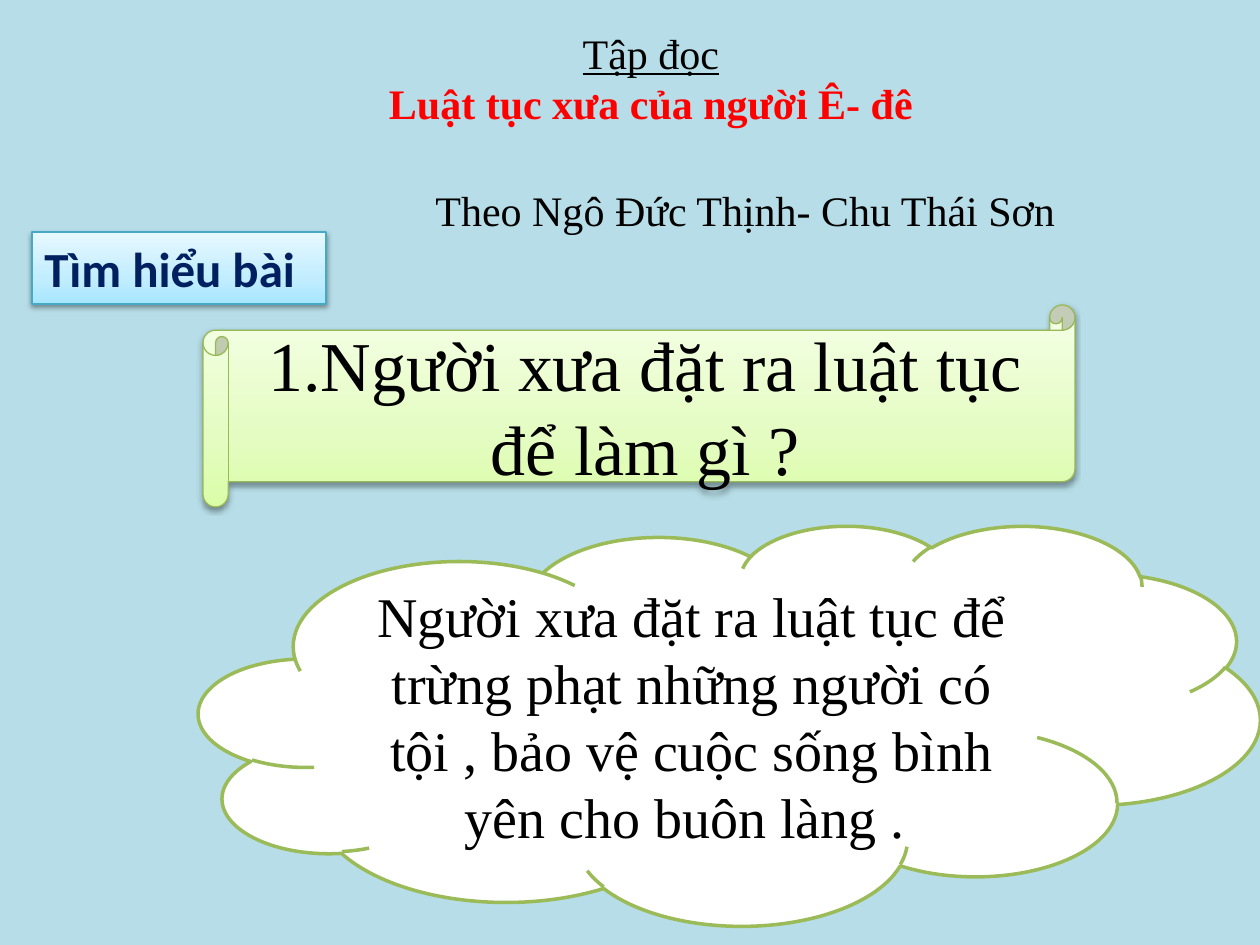
from copy import deepcopy

from lxml.etree import SubElement
from pptx import Presentation
from pptx.dml.color import RGBColor
from pptx.enum.shapes import MSO_SHAPE as SHAPE
from pptx.enum.text import MSO_ANCHOR as ANCHOR, MSO_AUTO_SIZE as AUTO, PP_ALIGN as ALIGN
from pptx.oxml.ns import qn
from pptx.util import Pt

PX = 914400 / 126
SKY = RGBColor(0xB7, 0xDE, 0xE8)
WHITE = RGBColor(0xFF, 0xFF, 0xFF)
BLACK = RGBColor(0, 0, 0)
RED = RGBColor(0xFF, 0, 0)
NAVY = RGBColor(0, 0x20, 0x60)
GREEN = RGBColor(0x9B, 0xBB, 0x59)
SCROLL_LINE = RGBColor(0x98, 0xB9, 0x55)
LABEL_LINE = RGBColor(0x46, 0xAA, 0xC5)
SCROLL_STOPS = [RGBColor(0xDA, 0xFD, 0xA7), RGBColor(0xE4, 0xFC, 0xC2), RGBColor(0xF5, 0xFF, 0xE7)]
LABEL_STOPS = [RGBColor(0xA7, 0xE6, 0xFF), RGBColor(0xC1, 0xED, 0xFF), RGBColor(0xE7, 0xF8, 0xFF)]
SERIF = "Times New Roman"


def add_text(para, text, size, color=BLACK, font=SERIF, bold=False, underline=False, align=ALIGN.CENTER):
    """Align a paragraph and add one formatted run to it."""
    para.alignment = align
    span = para.add_run()
    span.text = text
    span.font.size = Pt(size)
    span.font.name = font
    span.font.bold = bold
    span.font.underline = underline
    span.font.color.rgb = color


def style_raised(shape, colors):
    """Give a shape a three-stop upward gradient and a soft shadow below."""
    shape.fill.gradient()
    shape.fill.gradient_angle = 90
    stops = shape._element.spPr.find(qn("a:gradFill")).find(qn("a:gsLst"))
    stops.insert(1, deepcopy(stops[0]))
    for stop, position, color in zip(shape.fill.gradient_stops, (0, 0.35, 1), colors):
        stop.position = position
        stop.color.rgb = color
    effects = shape._element.spPr.find(qn("a:effectLst"))
    shadow = SubElement(effects, qn("a:outerShdw"), blurRad=str(Pt(3.1)), dist=str(Pt(1.6)),
                        dir="5400000", rotWithShape="0")
    tint = SubElement(shadow, qn("a:srgbClr"), val="000000")
    SubElement(tint, qn("a:alpha"), val="38000")


deck = Presentation()
deck.slide_width, deck.slide_height = round(1260 * PX), round(945 * PX)
page = deck.slides.add_slide(deck.slide_layouts[6])
page.background.fill.solid()
page.background.fill.fore_color.rgb = SKY

# Answer cloud, question scroll and section label
shapes = []
for kind, bounds, line, width in (
    (SHAPE.CLOUD, (199, 525, 1061, 400), GREEN, 2),
    (SHAPE.HORIZONTAL_SCROLL, (203, 305, 872, 202), SCROLL_LINE, 0.75),
    (SHAPE.RECTANGLE, (32, 232, 294, 72), LABEL_LINE, 0.75),
):
    shape = page.shapes.add_shape(kind, *(round(n * PX) for n in bounds))
    shape.shadow.inherit = False
    shape.line.color.rgb = line
    shape.line.width = Pt(width)
    shape.text_frame.word_wrap = True
    shape.text_frame.vertical_anchor = ANCHOR.MIDDLE
    shapes.append(shape)
cloud, scroll, label = shapes

cloud.fill.solid()
cloud.fill.fore_color.rgb = WHITE
style_raised(scroll, SCROLL_STOPS)
style_raised(label, LABEL_STOPS)
label.text_frame.vertical_anchor = ANCHOR.TOP
label.text_frame.auto_size = AUTO.SHAPE_TO_FIT_TEXT

add_text(cloud.text_frame.paragraphs[0],
         "Người xưa đặt ra luật tục để trừng phạt những người có tội , "
         "bảo vệ cuộc sống bình yên cho buôn làng . ", 32)
add_text(scroll.text_frame.paragraphs[0], "1.Người xưa đặt ra luật tục để làm gì ?", 40)
add_text(label.text_frame.paragraphs[0], "Tìm hiểu bài", 28, NAVY, "Calibri", bold=True, align=ALIGN.LEFT)

# Lesson heading and authors
heading = page.shapes.add_textbox(*(round(n * PX) for n in (84, 21, 1134, 105))).text_frame
heading.word_wrap = True
add_text(heading.paragraphs[0], "Tập đọc", 24, underline=True)
add_text(heading.add_paragraph(), "Luật tục xưa của người Ê- đê", 24, RED, bold=True)

authors = page.shapes.add_textbox(*(round(n * PX) for n in (423, 178, 651, 63))).text_frame
authors.word_wrap = False
authors.auto_size = AUTO.SHAPE_TO_FIT_TEXT
add_text(authors.paragraphs[0], "Theo Ngô Đức Thịnh- Chu Thái Sơn", 24, align=ALIGN.LEFT)

deck.save("out.pptx")
